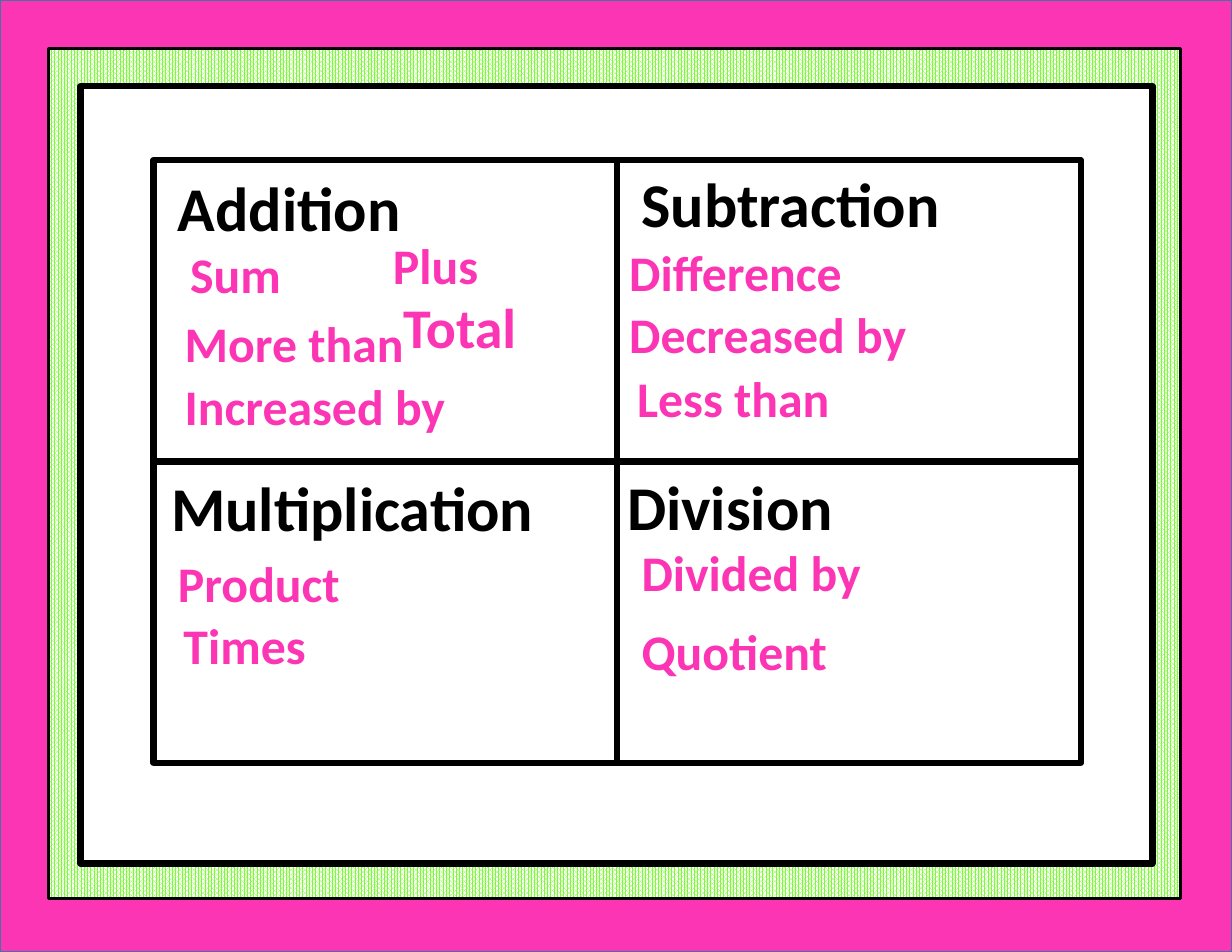
from lxml.etree import SubElement
from pptx import Presentation
from pptx.dml.color import RGBColor
from pptx.enum.dml import MSO_PATTERN
from pptx.enum.shapes import MSO_CONNECTOR, MSO_SHAPE
from pptx.enum.text import MSO_AUTO_SIZE
from pptx.oxml.ns import qn
from pptx.util import Inches, Pt

COLORS = {name: RGBColor.from_string(value) for name, value in {
    "pink": "FB35B4", "green": "7BFC34", "white": "FFFFFF",
    "black": "000000", "edge": "43739E"}.items()}

prs = Presentation()
prs.slide_width, prs.slide_height = Inches(11), Inches(8.5)
slide = prs.slides.add_slide(prs.slide_layouts[6])


def add_frame(left, top, width, height, fill, line, weight):
    frame = slide.shapes.add_shape(
        MSO_SHAPE.RECTANGLE, Inches(left), Inches(top), Inches(width), Inches(height))
    frame.shadow.inherit = False
    frame.fill.solid()
    frame.fill.fore_color.rgb = COLORS[fill]
    frame.line.color.rgb = COLORS[line]
    frame.line.width = Pt(weight)
    return frame


def add_word(text, left, top, width, size, color):
    box = slide.shapes.add_textbox(
        Inches(left), Inches(top), Inches(width), Pt(size * 1.2 + 7.2))
    box.text_frame.word_wrap = True
    box.text_frame.auto_size = MSO_AUTO_SIZE.SHAPE_TO_FIT_TEXT
    word = box.text_frame.paragraphs[0]
    word.text = text
    word.font.name = "Calibri"
    word.font.size = Pt(size)
    word.font.bold = True
    word.font.color.rgb = COLORS[color]


# Nested borders
add_frame(0, 0, 11, 8.5, "pink", "edge", 1)
stripes = add_frame(0.43, 0.43, 10.11, 7.59, "green", "black", 1.75)
stripes.fill.patterned()
stripes.fill.pattern = MSO_PATTERN.PERCENT_80
stripes.fill.fore_color.rgb = COLORS["green"]
stripes.fill.back_color.rgb = COLORS["white"]
add_frame(0.72, 0.77, 9.57, 6.94, "white", "black", 4)

# Two-by-two grid, divided at the middle of each side
GRID_LEFT, GRID_TOP = 1.37, 1.43
COLUMN, ROW = 4.14, 2.69
grid = add_frame(GRID_LEFT, GRID_TOP, 2 * COLUMN, 2 * ROW, "white", "black", 4)
for start, end in ((0, 2), (1, 3)):
    divider = slide.shapes.add_connector(MSO_CONNECTOR.STRAIGHT, 0, 0, 0, 0)
    divider.begin_connect(grid, start)
    divider.end_connect(grid, end)
    divider.line.color.rgb = COLORS["black"]
    divider.line.width = Pt(4)
    SubElement(divider._element.spPr, qn("a:effectLst"))

# Words by (column, row): text, offset right and down in the cell, width, size
operations = {
    (0, 0): [("Addition", 0.12, 0.03, 3.02, 40), ("Sum", 0.23, 0.7, 2.82, 32),
             ("More than", 0.18, 1.31, 3.05, 32), ("Increased by", 0.18, 1.88, 3.35, 32),
             ("Plus", 2.04, 0.62, 1.31, 32), ("Total", 2.13, 1.13, 1.45, 36)],
    (1, 0): [("Subtraction", 0.12, 0, 3.55, 40), ("Difference", 0.01, 0.68, 2.87, 32),
             ("Decreased by", 0.01, 1.23, 4.2, 32), ("Less than", 0.08, 1.8, 3.09, 32)],
    (0, 1): [("Multiplication", 0.06, 0.02, 4.06, 40), ("Product", 0.12, 0.77, 2.5, 32),
             ("Times", 0.17, 1.32, 2.24, 32)],
    (1, 1): [("Division", -0.01, 0.01, 3.32, 40), ("Divided by", 0.12, 0.67, 2.59, 32),
             ("Quotient", 0.12, 1.37, 3.02, 32)],
}
for (column, row), words in operations.items():
    for text, right, down, width, size in words:
        add_word(text, GRID_LEFT + column * COLUMN + right, GRID_TOP + row * ROW + down,
                 width, size, "black" if size == 40 else "pink")

prs.save("out.pptx")
